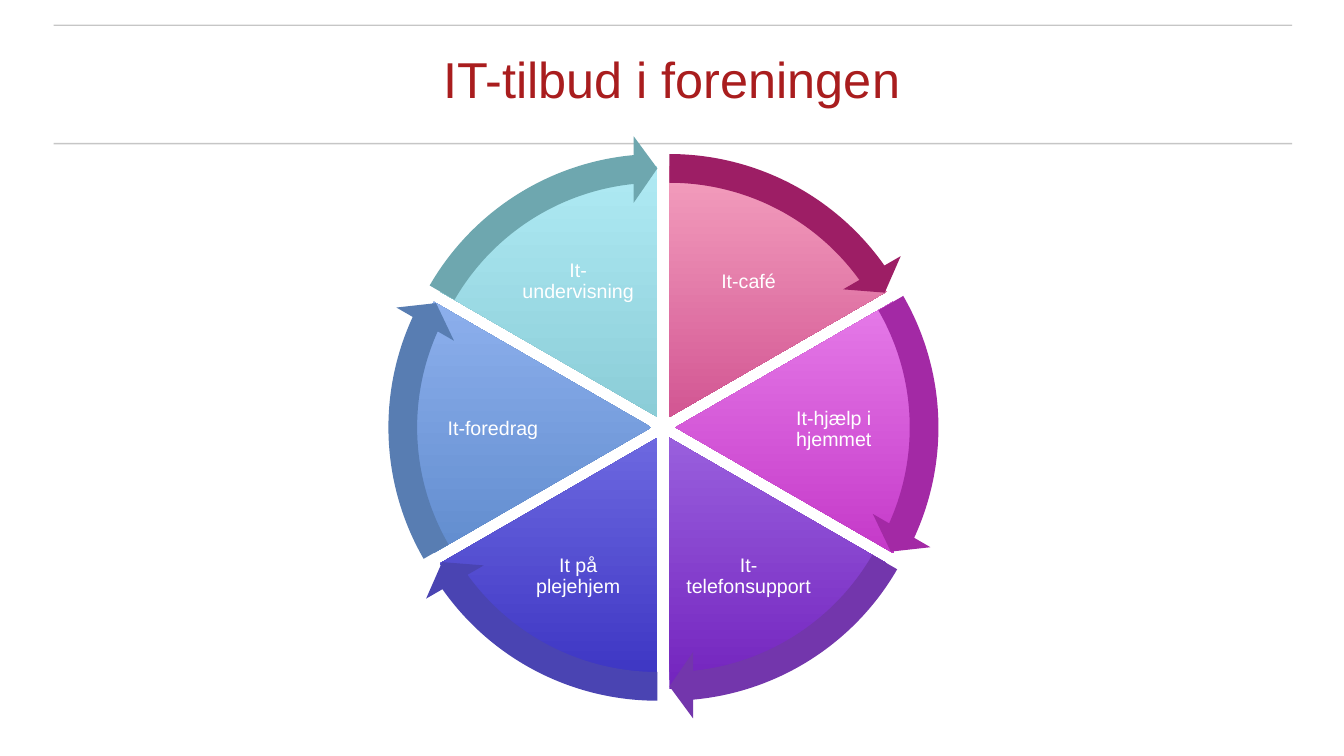
import math
from dataclasses import dataclass

from lxml import etree
from pptx import Presentation
from pptx import util as u
from pptx.dml.color import RGBColor
from pptx.enum import shapes, text
from pptx.oxml.ns import qn

TITLE = "IT-tilbud i foreningen"
OFFERS = [
    ("It-café", "B00B67", "F49FBE", "9D1E65"),
    ("It-hjælp i hjemmet", "B417B8", "F69DF9", "A329A5"),
    ("It-telefonsupport", "7324BE", "C09CFE", "7336AC"),
    ("It på plejehjem", "3B34C2", "A19EFF", "4A44B2"),
    ("It-foredrag", "4A7BBF", "A4C1FC", "587DB2"),
    ("It-undervisning", "64AEB9", "AFEAF4", "6EA7AF"),
]


@dataclass(frozen=True)
class Theme:
    font: str = "Arial"
    title: str = "A91D1E"
    label: str = "FFFFFF"
    rule: str = "444444"
    rule_alpha: int = 30000
    title_size: int = 36
    label_size: int = 14


THEME = Theme()
WIDTH, HEIGHT = 13.33, 7.5
MARGIN = 0.04 * WIDTH
RULE_ROWS = (HEIGHT / 30, 0.19 * HEIGHT)
HUB_X, HUB_Y = 6.58, 4.24
PIE_SIZE, ARROW_SIZE = 4.98, 5.59
SLICE_GAP, LABEL_RADIUS = 0.12, 1.69
STEP = 360 / len(OFFERS)
DEGREE = 0.6
HEAD_ANGLE = 3.275
BAND, HEAD = 0.051, 0.059


def color(value):
    return RGBColor.from_string(value)


def centred(x, y, width, height):
    return [u.Inches(v) for v in (x - width / 2, y - height / 2, width, height)]


def around_hub(index, radius):
    angle = math.radians(-90 + STEP * (index + 0.5))
    return HUB_X + radius * math.cos(angle), HUB_Y + radius * math.sin(angle)


def add_rule(slide, y):
    line = slide.shapes.add_connector(
        shapes.MSO_CONNECTOR.STRAIGHT,
        u.Inches(MARGIN), u.Inches(y), u.Inches(WIDTH - MARGIN + 0.02), u.Inches(y))
    line.line.width = u.Pt(1)
    line.line.color.rgb = color(THEME.rule)
    properties = line._element.spPr
    rgb = properties.find(".//" + qn("a:srgbClr"))
    etree.SubElement(rgb, qn("a:alpha")).set("val", str(THEME.rule_alpha))
    etree.SubElement(properties, qn("a:effectLst"))


def add_text(slide, content, box, size, rgb, inset, spacing):
    shape = slide.shapes.add_textbox(*box)
    frame = shape.text_frame
    frame.word_wrap = True
    frame.vertical_anchor = text.MSO_ANCHOR.MIDDLE
    frame.margin_left = frame.margin_right = u.Inches(inset)
    frame.margin_top = frame.margin_bottom = u.Inches(inset)
    frame.text = content
    paragraph = frame.paragraphs[0]
    paragraph.alignment = text.PP_ALIGN.CENTER
    paragraph.line_spacing = spacing
    font = paragraph.runs[0].font
    font.name, font.size = THEME.font, u.Pt(size)
    font.color.rgb = color(rgb)


def add_ring_part(slide, kind, index, size, adjustments):
    x, y = around_hub(index, SLICE_GAP)
    shape = slide.shapes.add_shape(kind, *centred(x, y, size, size))
    shape.shadow.inherit = False
    shape.line.fill.background()
    for position, value in enumerate(adjustments):
        shape.adjustments[position] = value
    return shape


def slice_angles(index):
    start = (270 + STEP * index) % 360
    return start * DEGREE, (start + STEP) * DEGREE


def add_slice(slide, index, label, dark, light):
    start, end = slice_angles(index)
    shape = add_ring_part(slide, shapes.MSO_SHAPE.PIE, index, PIE_SIZE,
                          (start, end % (360 * DEGREE)))
    shape.fill.gradient()
    shape.fill.gradient_angle = 90
    for stop, position, value in zip(shape.fill.gradient_stops, (0, 1), (dark, light)):
        stop.position = position
        stop.color.rgb = color(value)
    x, y = around_hub(index, LABEL_RADIUS)
    width, height = (1.36, 0.98) if index % 3 == 1 else (1.3, 1.01)
    add_text(slide, label, centred(x, y + 0.02, width, height),
             THEME.label_size, THEME.label, 0.02, 0.9)


def add_arrow(slide, index, rgb):
    start, end = slice_angles(index)
    tip = (end - HEAD_ANGLE) % (360 * DEGREE)
    shape = add_ring_part(slide, shapes.MSO_SHAPE.CIRCULAR_ARROW, index, ARROW_SIZE,
                          (BAND, HEAD_ANGLE, tip, start, HEAD))
    shape.fill.solid()
    shape.fill.fore_color.rgb = color(rgb)


def main():
    presentation = Presentation()
    presentation.slide_width = u.Inches(WIDTH)
    presentation.slide_height = u.Inches(HEIGHT)
    slide = presentation.slides.add_slide(presentation.slide_layouts[6])
    for y in RULE_ROWS:
        add_rule(slide, y)
    add_text(slide, TITLE, centred(WIDTH / 2, 0.78, WIDTH - 2 * MARGIN, 1.06),
             THEME.title_size, THEME.title, 0, 1.0)
    for index, (label, dark, light, _) in enumerate(OFFERS):
        add_slice(slide, index, label, dark, light)
    for index, (*_, arrow) in enumerate(OFFERS):
        add_arrow(slide, index, arrow)
    presentation.save("out.pptx")


if __name__ == "__main__":
    main()
